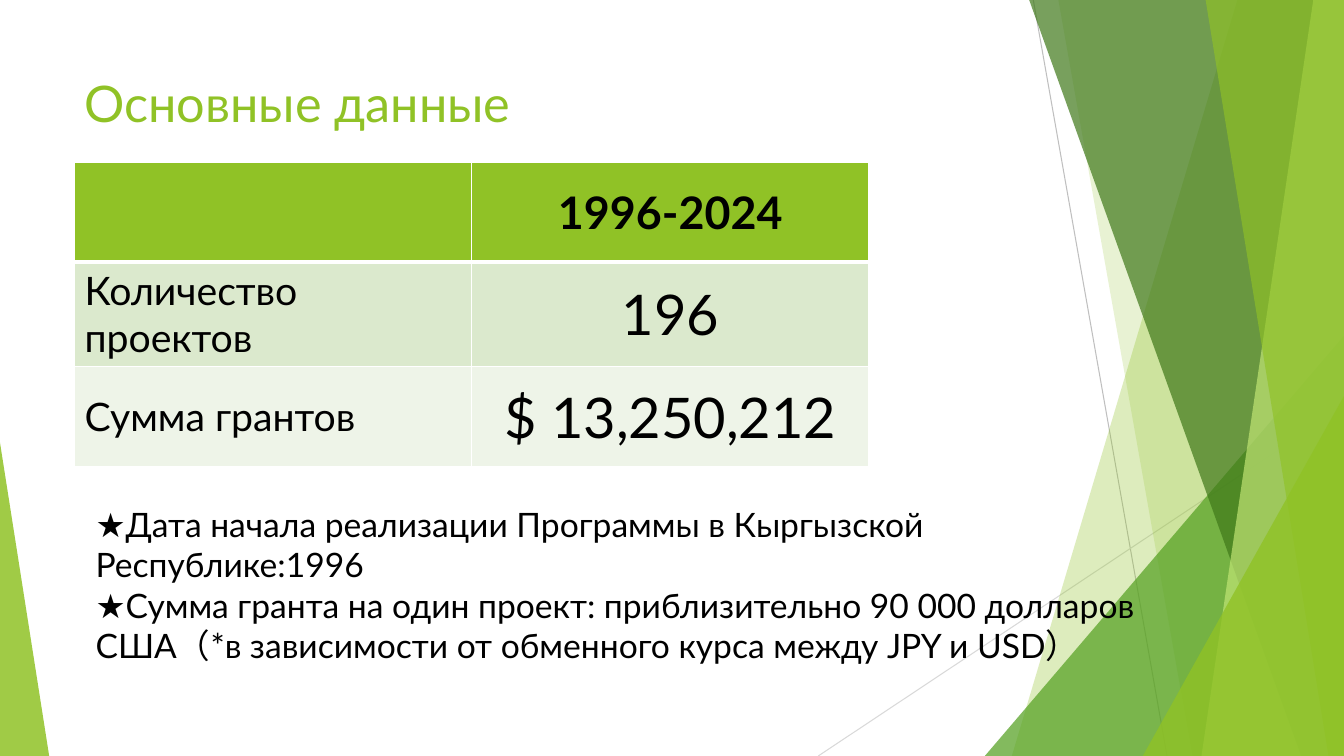
from lxml.etree import SubElement
from pptx import Presentation
from pptx.dml.color import RGBColor
from pptx.enum.shapes import MSO_CONNECTOR as Connector, MSO_SHAPE as Shape
from pptx.enum.text import MSO_ANCHOR as Anchor, PP_ALIGN as Align
from pptx.oxml.ns import qn
from pptx.util import Cm, Pt

WIDTH, HEIGHT = 33.87, 19.05
GREEN, BLACK, WHITE = "90C226", "000000", "FFFFFF"


def color(value):
    return RGBColor.from_string(value)


class SlideBuilder:
    """Holds the page being filled and its typeface."""

    font = "Lato"

    def __init__(self, page):
        self.page = page

    def line(self, start, end, stroke):
        line = self.page.shapes.add_connector(
            Connector.STRAIGHT, *[Cm(value) for value in (*start, *end)])
        line.line.color.rgb = color(stroke)
        line.line.width = Pt(0.75)
        SubElement(line._element.spPr, qn("a:effectLst"))

    def paint(self, shape, fill, opacity):
        """Give a shape a translucent fill without outline or shadow."""
        shape.shadow.inherit = False
        shape.fill.solid()
        shape.fill.fore_color.rgb = color(fill)
        tone = shape._element.spPr.find(qn("a:solidFill"))[0]
        SubElement(tone, qn("a:alpha"), val=str(opacity * 1000))
        shape.line.fill.background()

    def panel(self, top_x, bottom_x, fill, opacity):
        """Draw a full-height panel from a slanted left side to the slide edge."""
        top = -0.02
        outline = self.page.shapes.build_freeform(
            Cm(top_x), Cm(top), scale=1.0)
        corners = [(WIDTH, top), (WIDTH, HEIGHT), (bottom_x, HEIGHT)]
        outline.add_line_segments([(Cm(x), Cm(y)) for x, y in corners])
        self.paint(outline.convert_to_shape(), fill, opacity)

    def triangle(self, left, top, width, apex, fill, opacity):
        """Draw a triangle standing on the bottom edge of the slide."""
        shape = self.page.shapes.add_shape(
            Shape.ISOSCELES_TRIANGLE, Cm(left), Cm(top), Cm(width), Cm(HEIGHT - top))
        shape.adjustments[0] = apex
        self.paint(shape, fill, opacity)

    def span(self, para, text, size, tone=BLACK, bold=False):
        span = para.add_run()
        span.text = text
        span.font.name = self.font
        span.font.size = Pt(size)
        span.font.bold = bold
        span.font.color.rgb = color(tone)

    def text(self, left, top, width, height, lines, size, tone=BLACK):
        box = self.page.shapes.add_textbox(Cm(left), Cm(top), Cm(width), Cm(height))
        frame = box.text_frame
        frame.word_wrap = True
        for index, content in enumerate(lines):
            para = frame.add_paragraph() if index else frame.paragraphs[0]
            self.span(para, content, size, tone)

    def borders(self, cell, top, bottom):
        """Draw white cell borders; top and bottom are widths in points."""
        properties = cell._tc.get_or_add_tcPr()
        for side, width in zip("LRTB", (1, 1, top, bottom)):
            edge = SubElement(properties, qn(f"a:ln{side}"), w=str(Pt(width)))
            fill = SubElement(edge, qn("a:solidFill"))
            SubElement(fill, qn("a:srgbClr"), val=WHITE)

    def table(self, left, top, width, height, rows, fills, sizes):
        """Fill a table; sizes holds the text sizes of each row."""
        frame = self.page.shapes.add_table(
            len(rows), len(rows[0]), Cm(left), Cm(top), Cm(width), Cm(height))
        for row, texts in enumerate(rows):
            for column, content in enumerate(texts):
                cell = frame.table.cell(row, column)
                self.borders(cell, 3 if row == 1 else 1, 3 if row == 0 else 1)
                cell.fill.solid()
                cell.fill.fore_color.rgb = color(fills[row])
                cell.vertical_anchor = Anchor.MIDDLE
                para = cell.text_frame.paragraphs[0]
                para.alignment = Align.CENTER if column else Align.LEFT
                if content:
                    self.span(para, content, sizes[row][column], bold=row == 0)


def draw_background(slide):
    slide.line((26.04, 0), (29.41, HEIGHT), "BFBFBF")
    slide.line((WIDTH, 10.24), (20.62, HEIGHT), "D9D9D9")
    slide.panel(31.19, 25.5, GREEN, 30)
    slide.panel(26.67, 30.05, GREEN, 20)
    slide.triangle(24.82, 8.46, 9.05, 1, "54A021", 72)
    slide.panel(25.93, 32.79, "3F7819", 70)
    slide.panel(33.1, 30.28, "C0E474", 70)
    slide.panel(30.38, 33.48, GREEN, 65)
    slide.triangle(28.8, 9.98, 5.07, 1, GREEN, 80)
    slide.triangle(0, 11.15, 1.24, 0, GREEN, 85)


def main():
    deck = Presentation()
    deck.slide_width, deck.slide_height = Cm(WIDTH), Cm(HEIGHT)
    slide = SlideBuilder(deck.slides.add_slide(deck.slide_layouts[6]))
    draw_background(slide)
    slide.text(1.88, 1.7, 23.88, 3.66, ["Основные данные"], 36, GREEN)
    slide.table(
        1.88, 4.09, 20.02, 7.55,
        rows=[("", "1996-2024"),
              ("Количество проектов", "196"),
              ("Сумма грантов", "$ 13,250,212")],
        fills=[GREEN, "DBE9CD", "EEF4E8"],
        sizes=[(32, 32), (28, 40), (28, 40)])
    slide.text(2.16, 12.57, 26.7, 5.92, [
        "★Дата начала реализации Программы в Кыргызской Республике:1996",
        "★Сумма гранта на один проект: приблизительно 90 000 долларов США"
        "（*в зависимости от обменного курса между JPY и USD）",
    ], 24)
    deck.save("out.pptx")


if __name__ == "__main__":
    main()
